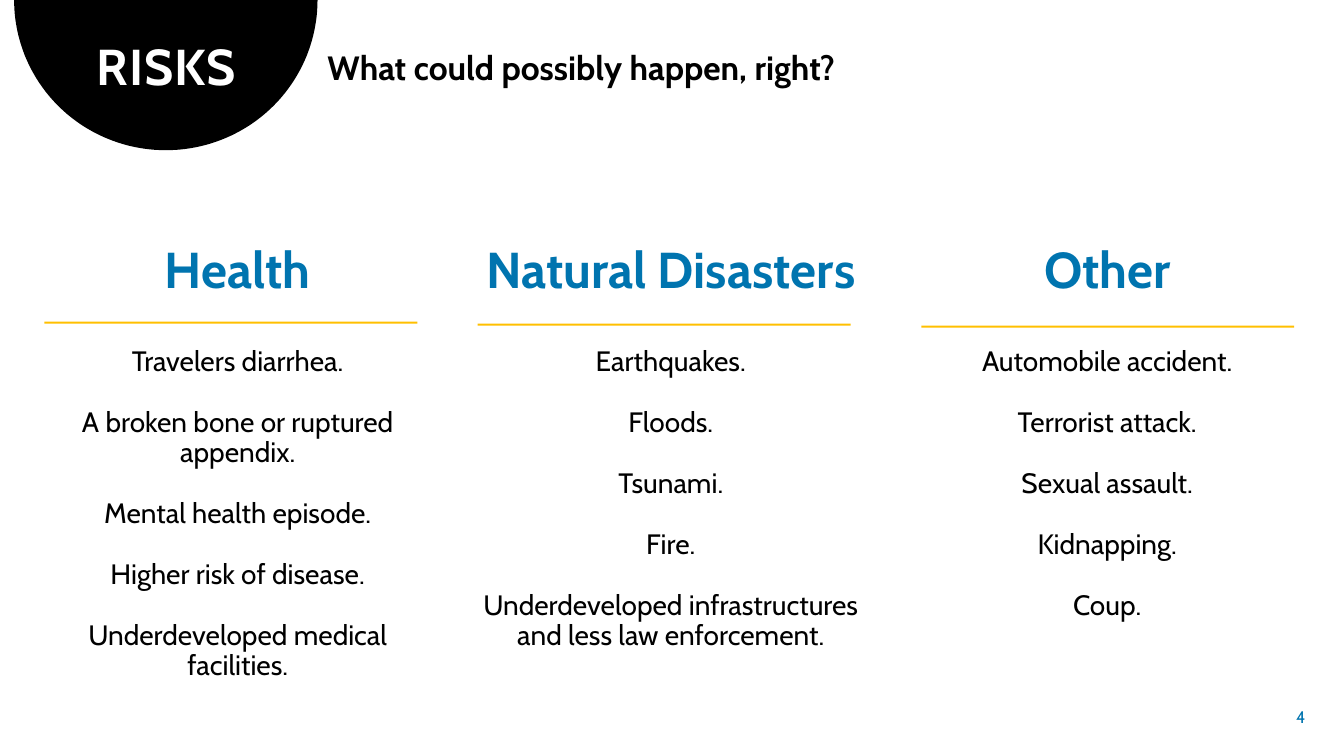
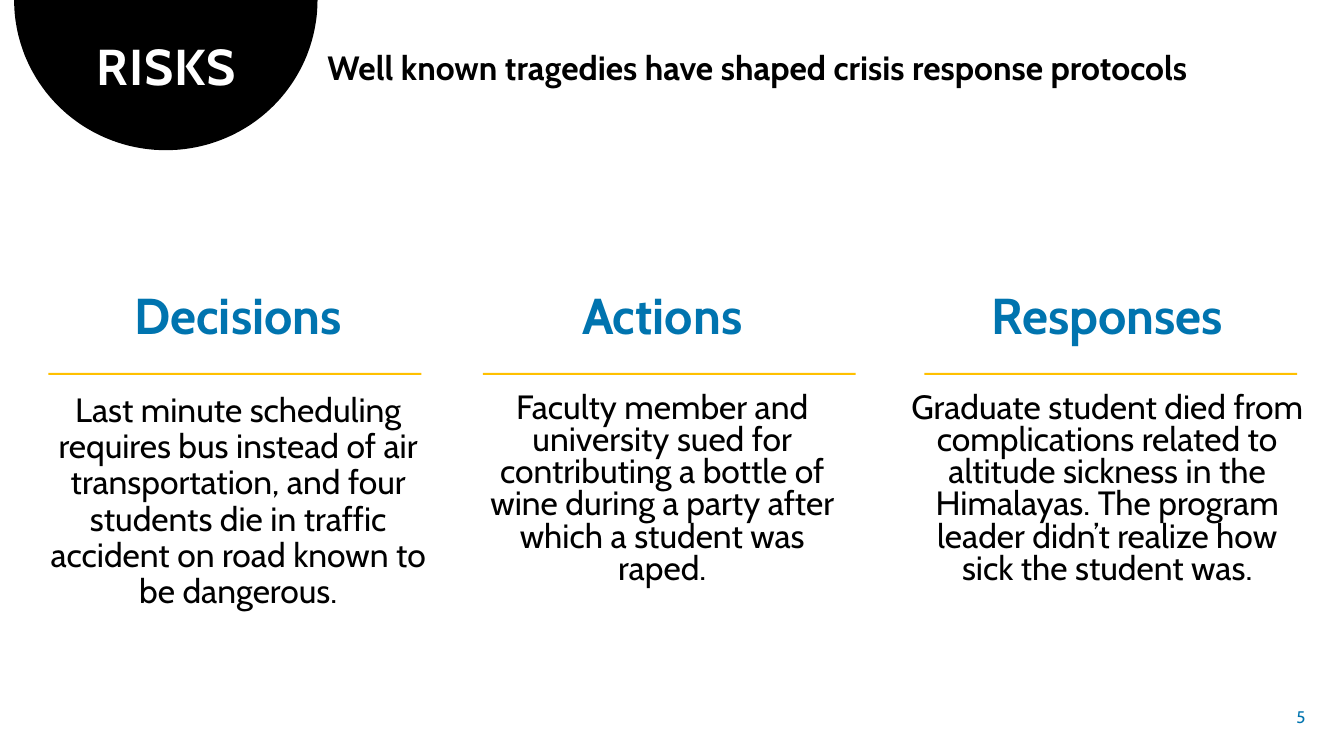
import math
from dataclasses import dataclass

import pptx
import pptx.dml.color
import pptx.enum.shapes
import pptx.enum.text
import pptx.shapes.base
import pptx.slide
import pptx.util

ALIGN = pptx.enum.text.PP_ALIGN
ANCHOR = pptx.enum.text.MSO_ANCHOR
AUTO_SIZE = pptx.enum.text.MSO_AUTO_SIZE
RGB = pptx.dml.color.RGBColor

SLIDE_WIDTH = pptx.util.Inches(13.333)
SLIDE_HEIGHT = pptx.util.Inches(7.5)
CELL = SLIDE_WIDTH / 40  # square grid cell: 40 columns by 22.5 rows


@dataclass(frozen=True)
class Theme:
    font: str = "Cabin"
    ink: str = "000000"
    paper: str = "FFFFFF"
    accent: str = "0074AF"
    rule: str = "FFC000"
    heading_size: int = 36
    lead_size: int = 24
    item_size: int = 20
    number_size: int = 12


THEME = Theme()


@dataclass(frozen=True)
class Area:
    """A rectangle in grid columns and rows."""
    column: float
    row: float
    columns: float
    rows: float

    def emu(self) -> tuple[int, ...]:
        return tuple(grid(n) for n in (self.column, self.row, self.columns, self.rows))


@dataclass(frozen=True)
class Line:
    """One paragraph and its style."""
    text: str
    size: int
    color: str
    bold: bool = False
    align: ALIGN = ALIGN.CENTER
    spacing: float = 0.9
    after: int = 0
    tracking: int = 0  # hundredths of a point


@dataclass(frozen=True)
class Topic:
    heading: str
    items: tuple[str, ...]
    area: Area
    rule_column: float
    rule_row: float
    spacing: float = 0.9


@dataclass(frozen=True)
class RiskSlide:
    number: int
    lead: str
    item_size: int
    topics: tuple[Topic, ...]


BADGE = Area(0.42, 0, 9.03, 4.47)
TITLE = Area(1.05, 1.11, 7.8, 1.95)
LEAD = Area(9.45, 1.38, 29.79, 1.38)
NUMBER = Area(37.5, 20.73, 1.65, 1.2)
RULE_COLUMNS, RULE_ROWS = 11.1, 0.06

RISK_SLIDES = (
    RiskSlide(4, "What could possibly happen, right?", THEME.item_size, (
        Topic("Health",
              ("Travelers diarrhea.",
               "A broken bone or ruptured appendix.",
               "Mental health episode.",
               "Higher risk of disease.",
               "Underdeveloped medical facilities."),
              Area(1, 7.14, 12.15, 14.82), 1.32, 9.57),
        Topic("Natural Disasters",
              ("Earthquakes.", "Floods.", "Tsunami.", "Fire.",
               "Underdeveloped infrastructures and less law enforcement."),
              Area(13.68, 7.14, 12.57, 13.92), 14.22, 9.63),
        Topic("Other",
              ("Automobile accident.", "Terrorist attack.", "Sexual assault.",
               "Kidnapping.", "Coup."),
              Area(26.76, 7.14, 12.39, 13.02), 27.42, 9.69),
    )),
    RiskSlide(5, "Well known tragedies have shaped crisis response protocols",
              THEME.lead_size, (
        Topic("Decisions",
              ("Last minute scheduling requires bus instead of air transportation, "
               "and four students die in traffic accident on road known to be "
               "dangerous.",),
              Area(1, 8.52, 12.18, 9.9), 1.44, 11.1),
        Topic("Actions",
              ("Faculty member and university sued for contributing a bottle of "
               "wine during a party after which a student was raped.",),
              Area(13.95, 8.52, 11.52, 8.22), 14.37, 11.1, spacing=0.8),
        Topic("Responses",
              ("Graduate student died from complications related to altitude "
               "sickness in the Himalayas. The program leader didn’t realize how "
               "sick the student was.",),
              Area(26.76, 8.52, 12.39, 9.18), 27.51, 11.1, spacing=0.8),
    )),
)


def grid(cells: float) -> int:
    return round(cells * CELL)


def paint(shape: pptx.shapes.base.BaseShape, color: str) -> None:
    """Give a shape a flat fill with no outline or shadow."""
    shape.shadow.inherit = False
    shape.fill.solid()
    shape.fill.fore_color.rgb = RGB.from_string(color)
    shape.line.fill.background()


def add_badge(slide: pptx.slide.Slide, steps: int = 120) -> None:
    """Draw the half disc that hangs from the top edge."""
    radius_x = BADGE.columns / 2
    center = BADGE.column + radius_x
    angles = [math.pi * step / steps for step in range(steps + 1)]
    arc = [(grid(center + radius_x * math.cos(angle)),
            grid(BADGE.row + BADGE.rows * math.sin(angle))) for angle in angles]
    outline = slide.shapes.build_freeform(*arc[0])
    outline.add_line_segments(arc[1:], close=True)
    paint(outline.convert_to_shape(), THEME.ink)


def add_text(slide: pptx.slide.Slide, area: Area, lines: list[Line],
             grow: bool = True) -> None:
    frame = slide.shapes.add_textbox(*area.emu()).text_frame
    frame.word_wrap = grow
    frame.auto_size = AUTO_SIZE.SHAPE_TO_FIT_TEXT if grow else AUTO_SIZE.NONE
    frame.vertical_anchor = ANCHOR.TOP if grow else ANCHOR.MIDDLE
    for index, line in enumerate(lines):
        paragraph = frame.add_paragraph() if index else frame.paragraphs[0]
        run = paragraph.add_run()
        run.text = line.text
        if line.tracking:
            run._r.get_or_add_rPr().set("spc", str(line.tracking))
        paragraph.alignment = line.align
        paragraph.line_spacing = line.spacing
        paragraph.space_before = pptx.util.Pt(10 if index else 0)
        paragraph.space_after = pptx.util.Pt(line.after)
        paragraph.font.name = THEME.font
        paragraph.font.size = pptx.util.Pt(line.size)
        paragraph.font.bold = line.bold
        paragraph.font.color.rgb = RGB.from_string(line.color)


def add_topic(slide: pptx.slide.Slide, topic: Topic, item_size: int) -> None:
    heading = Line(topic.heading, THEME.heading_size, THEME.accent, bold=True, after=24)
    items = [Line(item, item_size, THEME.ink, spacing=topic.spacing, after=12)
             for item in topic.items]
    add_text(slide, topic.area, [heading, *items])
    rule_area = Area(topic.rule_column, topic.rule_row, RULE_COLUMNS, RULE_ROWS)
    rule = slide.shapes.add_shape(
        pptx.enum.shapes.MSO_SHAPE.RECTANGLE, *rule_area.emu())
    paint(rule, THEME.rule)


def add_risk_slide(deck: pptx.presentation.Presentation, content: RiskSlide) -> None:
    slide = deck.slides.add_slide(deck.slide_layouts[6])
    slide.background.fill.solid()
    slide.background.fill.fore_color.rgb = RGB.from_string(THEME.paper)
    add_badge(slide)
    add_text(slide, TITLE, [Line("RISKS", THEME.heading_size, THEME.paper,
                                 bold=True, tracking=60)])
    add_text(slide, LEAD, [Line(content.lead, THEME.lead_size, THEME.ink,
                                bold=True, align=ALIGN.LEFT)])
    for topic in content.topics:
        add_topic(slide, topic, content.item_size)
    add_text(slide, NUMBER, [Line(str(content.number), THEME.number_size, THEME.accent,
                                  align=ALIGN.RIGHT, spacing=1.0)], grow=False)


def main() -> None:
    deck = pptx.Presentation()
    deck.slide_width = SLIDE_WIDTH
    deck.slide_height = SLIDE_HEIGHT
    for content in RISK_SLIDES:
        add_risk_slide(deck, content)
    deck.save("out.pptx")


if __name__ == "__main__":
    main()
